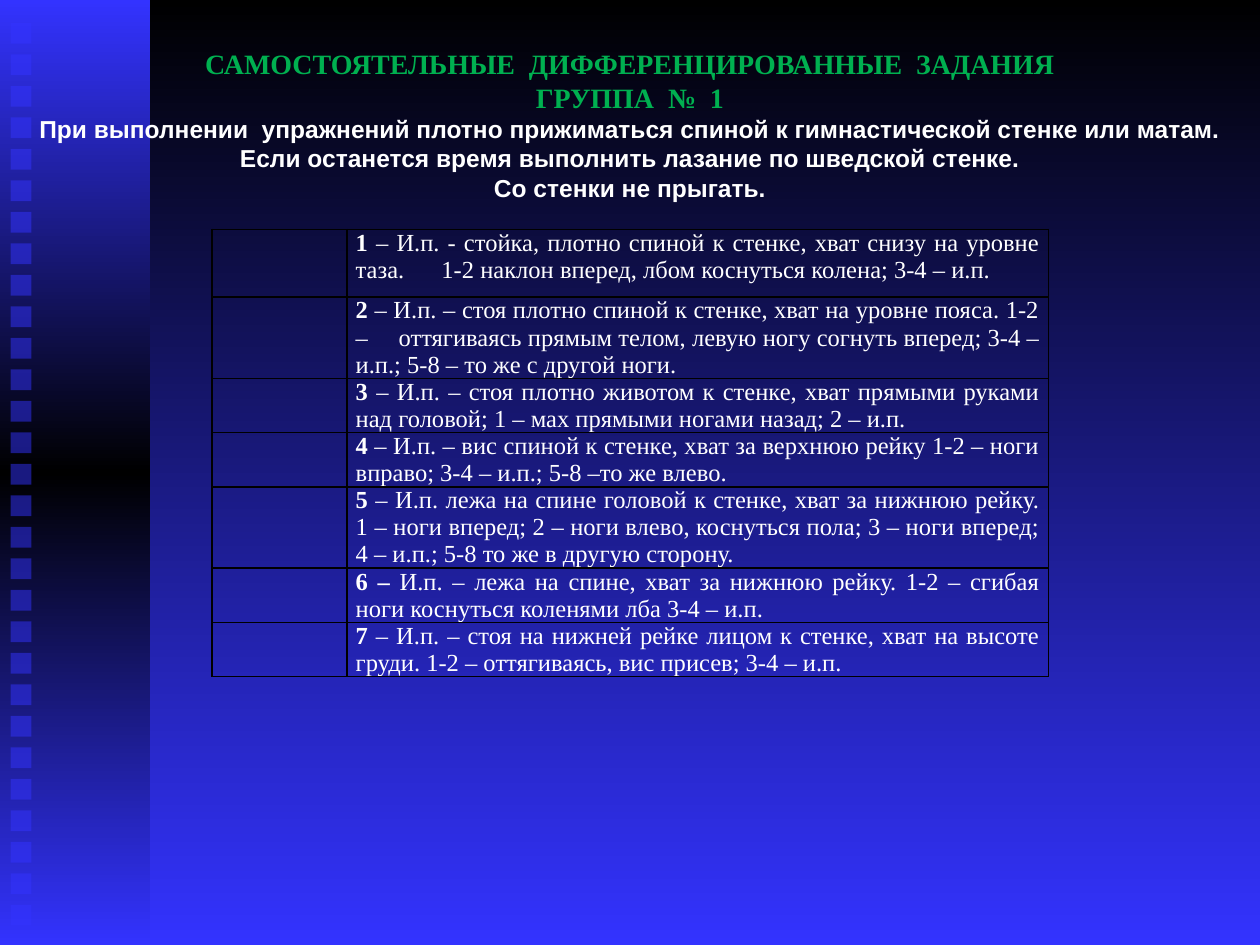
from copy import deepcopy
from dataclasses import dataclass

from lxml.etree import SubElement
from pptx import Presentation
from pptx.dml.color import RGBColor
from pptx.enum.shapes import MSO_SHAPE
from pptx.enum.text import MSO_ANCHOR, MSO_AUTO_SIZE, PP_ALIGN
from pptx.oxml.ns import qn
from pptx.util import Pt

RECTANGLE = MSO_SHAPE.RECTANGLE
MIDDLE = MSO_ANCHOR.MIDDLE
GROW = MSO_AUTO_SIZE.SHAPE_TO_FIT_TEXT
CENTER = PP_ALIGN.CENTER
JUSTIFY = PP_ALIGN.JUSTIFY


@dataclass(frozen=True)
class Theme:
    blue: str = "3333FF"
    black: str = "000000"
    white: str = "FFFFFF"
    green: str = "00B050"
    serif: str = "Times New Roman"
    sans: str = "Arial"
    heading_size: float = 16
    body_size: float = 14


@dataclass(frozen=True)
class Exercise:
    label: str
    text: str
    height: float
    tab: float = 0


@dataclass(frozen=True)
class Heading:
    text: str
    size: float
    font: str
    color: str


THEME = Theme()
SLIDE_WIDTH, SLIDE_HEIGHT = 720, 540
BAR_WIDTH = 85.7
SQUARE_COUNT, SQUARE_SIZE, SQUARE_PITCH = 29, 12, 18
SQUARE_LEFT, SQUARE_TOP = 6, 13
TABLE_LEFT, TABLE_TOP = 121, 131.2
COLUMN_WIDTHS = (77.2, 401)
CELL_MARGIN = 5.1
TWO_LINES, THREE_LINES = 31, 46.5

HEADINGS = [
    *(Heading(text, THEME.heading_size, THEME.serif, THEME.green) for text in (
        "САМОСТОЯТЕЛЬНЫЕ  ДИФФЕРЕНЦИРОВАННЫЕ  ЗАДАНИЯ",
        "ГРУППА  №  1",
    )),
    *(Heading(text, THEME.body_size, THEME.sans, THEME.white) for text in (
        "При выполнении  упражнений плотно прижиматься спиной к гимнастической стенке или матам.",
        "Если останется время выполнить лазание по шведской стенке.",
        "Со стенки не прыгать.",
    )),
]

EXERCISES = [
    Exercise("1", " – И.п. - стойка, плотно спиной к стенке, хват снизу на уровне таза."
             "\t1-2 наклон вперед, лбом коснуться колена; 3-4 – и.п.", 38.6, 49),
    Exercise("2", " – И.п. – стоя плотно спиной к стенке, хват на уровне пояса. 1-2 –"
             "\tоттягиваясь прямым телом, левую ногу согнуть вперед; 3-4 – и.п.; "
             "5-8 – то же с другой ноги.", THREE_LINES, 24.5),
    Exercise("3", " – И.п. – стоя плотно животом к стенке, хват прямыми руками над головой; "
             "1 – мах прямыми ногами назад; 2 – и.п.", TWO_LINES),
    Exercise("4", " – И.п. – вис спиной к стенке, хват за верхнюю рейку 1-2 – ноги вправо; "
             "3-4 – и.п.; 5-8 –то же влево.", TWO_LINES),
    Exercise("5 ", "– И.п. лежа на спине головой к стенке, хват за нижнюю рейку. "
             "1 – ноги вперед; 2 – ноги влево, коснуться пола; 3 – ноги вперед; "
             "4 – и.п.; 5-8 то же в другую сторону.", THREE_LINES),
    Exercise("6 – ", "И.п. – лежа на спине, хват за нижнюю рейку. 1-2 – сгибая ноги "
             "коснуться коленями лба 3-4 – и.п.", TWO_LINES),
    Exercise("7 ", "– И.п. – стоя на нижней рейке лицом к стенке, хват на высоте груди. "
             "1-2 – оттягиваясь, вис присев; 3-4 – и.п.", TWO_LINES),
]


def set_vertical_gradient(fill, element, colors: list[str]) -> None:
    fill.gradient()
    fill.gradient_angle = 270
    stop_list = element.find(".//" + qn("a:gsLst"))
    while len(stop_list) < len(colors):
        stop_list.append(deepcopy(stop_list[0]))
    for index, (stop, color) in enumerate(zip(fill.gradient_stops, colors)):
        stop.position = index / (len(colors) - 1)
        stop.color.rgb = RGBColor.from_string(color)


def add_rectangle(shapes, left: float, top: float, width: float, height: float):
    shape = shapes.add_shape(RECTANGLE, Pt(left), Pt(top), Pt(width), Pt(height))
    shape.shadow.inherit = False
    shape.line.fill.background()
    return shape


def add_side_bar(slide) -> None:
    shapes = slide.shapes.add_group_shape().shapes
    bar = add_rectangle(shapes, 0, 0, BAR_WIDTH, SLIDE_HEIGHT)
    set_vertical_gradient(bar.fill, bar._element, [THEME.blue, THEME.black, THEME.blue])
    for index in range(SQUARE_COUNT):
        square = add_rectangle(shapes, SQUARE_LEFT, SQUARE_TOP + index * SQUARE_PITCH,
                               SQUARE_SIZE, SQUARE_SIZE)
        square.fill.solid()
        square.fill.fore_color.rgb = RGBColor.from_string(THEME.blue)
        color = square._element.spPr.find(qn("a:solidFill"))[0]
        SubElement(color, qn("a:alpha"), val="50000")


def format_font(paragraph, size: float, name: str, color: str) -> None:
    paragraph.font.size = Pt(size)
    paragraph.font.name = name
    paragraph.font.color.rgb = RGBColor.from_string(color)


def format_cell(cell) -> None:
    properties = cell._tc.get_or_add_tcPr()
    for side in ("a:lnL", "a:lnR", "a:lnT", "a:lnB"):
        line = SubElement(properties, qn(side), w=str(Pt(1)))
        SubElement(SubElement(line, qn("a:solidFill")), qn("a:srgbClr"), val=THEME.black)
    cell.fill.background()
    cell.margin_left = cell.margin_right = Pt(CELL_MARGIN)
    cell.margin_top = cell.margin_bottom = 0


def write_exercise(cell, exercise: Exercise) -> None:
    paragraph = cell.text_frame.paragraphs[0]
    paragraph.alignment = JUSTIFY
    if exercise.tab:
        tabs = SubElement(paragraph._p.get_or_add_pPr(), qn("a:tabLst"))
        SubElement(tabs, qn("a:tab"), pos=str(Pt(exercise.tab)), algn="l")
    format_font(paragraph, THEME.body_size, THEME.serif, THEME.white)
    for text, bold in ((exercise.label, True), (exercise.text, False)):
        run = paragraph.add_run()
        run.text = text
        run.font.bold = bold


def add_exercise_table(slide, exercises: list[Exercise]) -> None:
    frame = slide.shapes.add_table(
        len(exercises), len(COLUMN_WIDTHS), Pt(TABLE_LEFT), Pt(TABLE_TOP),
        Pt(sum(COLUMN_WIDTHS)), Pt(sum(exercise.height for exercise in exercises)))
    table = frame.table
    table.first_row = table.horz_banding = False
    for column, width in zip(table.columns, COLUMN_WIDTHS):
        column.width = Pt(width)
    for row, exercise in zip(table.rows, exercises):
        row.height = Pt(exercise.height)
        for cell in row.cells:
            format_cell(cell)
        write_exercise(row.cells[1], exercise)


def write_title(slide, headings: list[Heading]) -> None:
    title = slide.shapes.title
    title.left, title.top, title.width, title.height = Pt(11.2), Pt(22.5), Pt(697.6), Pt(97.2)
    frame = title.text_frame
    frame.word_wrap = True
    frame.auto_size = GROW
    frame.vertical_anchor = MIDDLE
    frame.text = "\n".join(heading.text for heading in headings)
    for paragraph, heading in zip(frame.paragraphs, headings):
        paragraph.alignment = CENTER
        format_font(paragraph, heading.size, heading.font, heading.color)
        paragraph.font.bold = True
    slide.shapes._spTree.append(title._element)


def main() -> None:
    presentation = Presentation()
    presentation.slide_width, presentation.slide_height = Pt(SLIDE_WIDTH), Pt(SLIDE_HEIGHT)
    slide = presentation.slides.add_slide(presentation.slide_layouts[5])
    set_vertical_gradient(slide.background.fill, slide._element, [THEME.black, THEME.blue])
    add_side_bar(slide)
    add_exercise_table(slide, EXERCISES)
    write_title(slide, HEADINGS)
    presentation.save("out.pptx")


if __name__ == "__main__":
    main()
